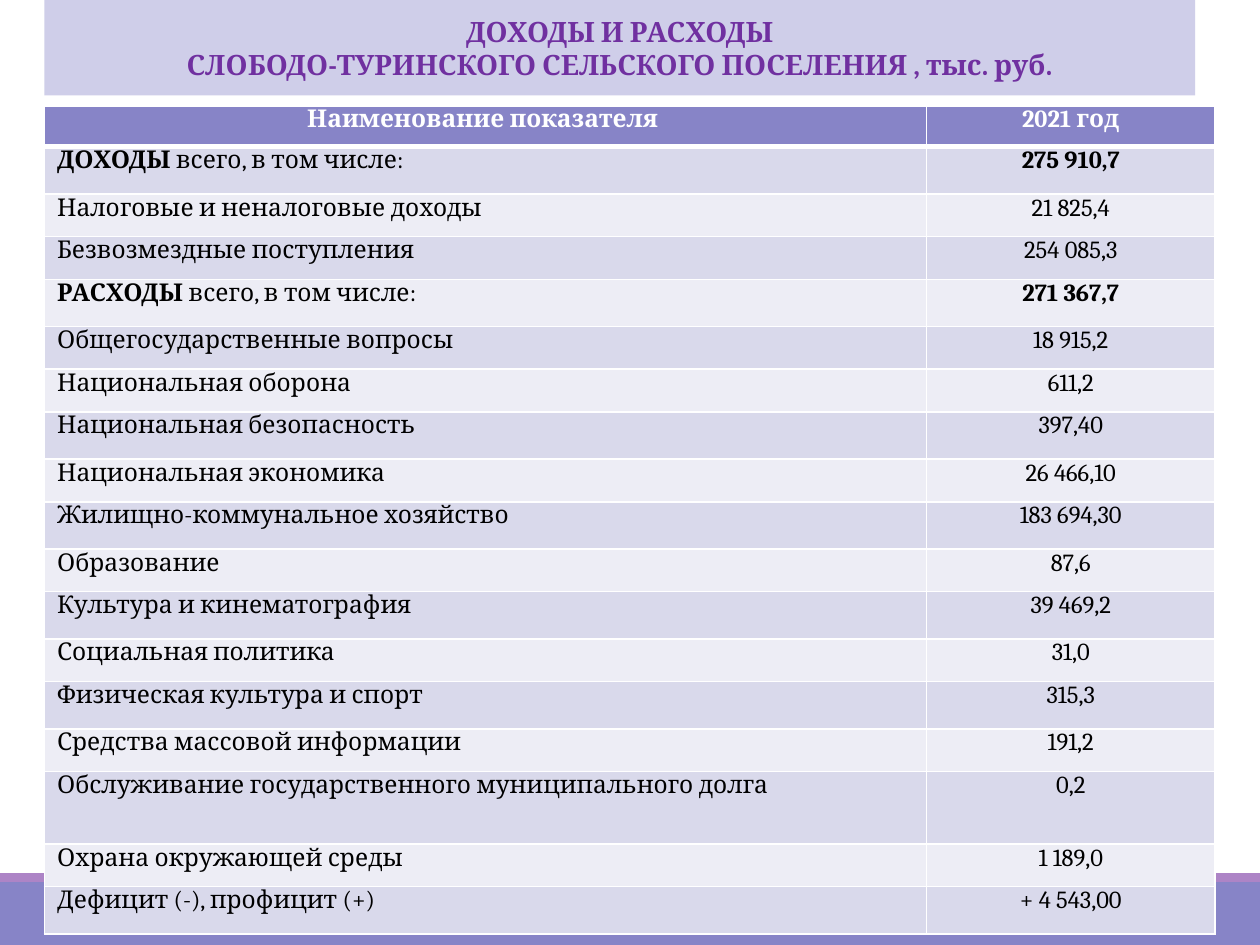
import pptx
import pptx.util
import pptx.dml.color
import pptx.enum.shapes
import pptx.enum.text
import pptx.oxml
import pptx.oxml.ns
from lxml import etree

Pt = pptx.util.Pt
Align = pptx.enum.text.PP_ALIGN
Anchor = pptx.enum.text.MSO_ANCHOR

TITLE = ["ДОХОДЫ И РАСХОДЫ", "СЛОБОДО-ТУРИНСКОГО СЕЛЬСКОГО ПОСЕЛЕНИЯ , тыс. руб."]
HEADINGS = ("Наименование показателя ", "2021 год")
TALL, SHORT, DOUBLE = 27, 24.4, 41.5
INDICATORS = [
    ("ДОХОДЫ ", "всего, в том числе:", "275 910,7", TALL),
    ("", "Налоговые и неналоговые доходы", "21 825,4", SHORT),
    ("", "Безвозмездные поступления", "254 085,3", SHORT),
    ("РАСХОДЫ ", "всего, в том числе:", "271 367,7", TALL),
    ("", "Общегосударственные вопросы", "18 915,2", SHORT),
    ("", "Национальная оборона", "611,2", SHORT),
    ("", "Национальная безопасность", "397,40", TALL),
    ("", "Национальная экономика", "26 466,10", SHORT),
    ("", "Жилищно-коммунальное хозяйство", "183 694,30", TALL),
    ("", "Образование", "87,6", SHORT),
    ("", "Культура и кинематография", "39 469,2", TALL),
    ("", "Социальная политика", "31,0", SHORT),
    ("", "Физическая культура и спорт", "315,3", TALL),
    ("", "Средства массовой информации", "191,2", SHORT),
    ("", "Обслуживание государственного муниципального долга", "0,2", DOUBLE),
    ("", "Охрана окружающей среды", "1 189,0", SHORT),
    ("", "Дефицит (-), профицит (+)", "+ 4 543,00", TALL),
]
THEME = {
    "font": "Cambria", "title_size": 16, "table_size": 14,
    "title_text": "7030A0", "title_fill": "CFCEE9",
    "header": "8784C7", "accent": "AD84C6", "white": "FFFFFF", "black": "000000",
    "bands": ("D9D9EB", "EDEDF5"),
}
PAGE_WIDTH, PAGE_HEIGHT = 720, 540
LEFT, TABLE_TOP, HEADER_HEIGHT = 25.4, 60.5, 23.4
COLUMN_WIDTHS = (504, 165)
BARS = [(504, 36, THEME["header"]), (499, 5, THEME["accent"])]


def paint(target, color):
    target.fill.solid()
    target.fill.fore_color.rgb = pptx.dml.color.RGBColor.from_string(color)


def write(para, text, size=THEME["table_size"], color=THEME["black"], bold=False, align=Align.LEFT):
    para.alignment = align
    span = para.add_run()
    span.text = text
    span.font.name = THEME["font"]
    span.font.size = Pt(size)
    span.font.bold = bold
    span.font.color.rgb = pptx.dml.color.RGBColor.from_string(color)


def add_borders(cell, **widths):
    properties = cell._tc.get_or_add_tcPr()
    for index, side in enumerate("LRTB"):
        line = pptx.oxml.parse_xml(
            f'<a:ln{side} {pptx.oxml.ns.nsdecls("a")} w="{Pt(widths.get(side, 1))}">'
            f'<a:solidFill><a:srgbClr val="{THEME["white"]}"/></a:solidFill></a:ln{side}>')
        properties.insert(index, line)


def format_cell(cell, color, **widths):
    cell.margin_left = cell.margin_right = Pt(7.2)
    cell.margin_top = cell.margin_bottom = 0
    cell.vertical_anchor = Anchor.TOP
    paint(cell, color)
    add_borders(cell, **widths)
    return cell.text_frame.paragraphs[0]


def add_bars(page):
    for top, height, color in BARS:
        bar = page.shapes.add_shape(
            pptx.enum.shapes.MSO_SHAPE.RECTANGLE, 0, Pt(top), Pt(PAGE_WIDTH), Pt(height))
        bar.shadow.inherit = False
        paint(bar, color)
        bar.line.fill.background()


def add_title(page):
    box = page.shapes.title
    box.left, box.top, box.width, box.height = Pt(LEFT), 0, Pt(657.5), Pt(54.5)
    outline = etree.SubElement(
        box._element.spPr, pptx.oxml.ns.qn("a:prstGeom"), prst="roundRect")
    etree.SubElement(outline, pptx.oxml.ns.qn("a:avLst"))
    paint(box, THEME["title_fill"])
    frame = box.text_frame
    frame.word_wrap = True
    frame.auto_size = pptx.enum.text.MSO_AUTO_SIZE.NONE
    frame.vertical_anchor = Anchor.MIDDLE
    for index, text in enumerate(TITLE):
        para = frame.add_paragraph() if index else frame.paragraphs[0]
        para.space_before = 0
        write(para, text, size=THEME["title_size"], color=THEME["title_text"],
              bold=True, align=Align.CENTER)


def add_budget_table(page):
    heights = [HEADER_HEIGHT] + [row[-1] for row in INDICATORS]
    table = page.shapes.add_table(
        len(heights), len(COLUMN_WIDTHS), Pt(LEFT), Pt(TABLE_TOP),
        Pt(sum(COLUMN_WIDTHS)), Pt(sum(heights))).table
    for column, width in zip(table.columns, COLUMN_WIDTHS):
        column.width = Pt(width)
    for row, height in zip(table.rows, heights):
        row.height = Pt(height)
    for index, text in enumerate(HEADINGS):
        para = format_cell(table.cell(0, index), THEME["header"], B=3)
        write(para, text, color=THEME["white"], bold=True, align=Align.CENTER)
    for index, (lead, label, value, height) in enumerate(INDICATORS):
        color = THEME["bands"][index % 2]
        top_line = 1 if index else 3
        name, amount = (
            format_cell(table.cell(index + 1, column), color, T=top_line) for column in (0, 1))
        if lead:
            write(name, lead, bold=True)
        write(name, label)
        write(amount, value, bold=bool(lead), align=Align.CENTER)


def main():
    deck = pptx.Presentation()
    deck.slide_width, deck.slide_height = Pt(PAGE_WIDTH), Pt(PAGE_HEIGHT)
    page = deck.slides.add_slide(deck.slide_layouts.get_by_name("Title Only"))
    add_bars(page)
    add_title(page)
    add_budget_table(page)
    deck.save("out.pptx")


if __name__ == "__main__":
    main()
